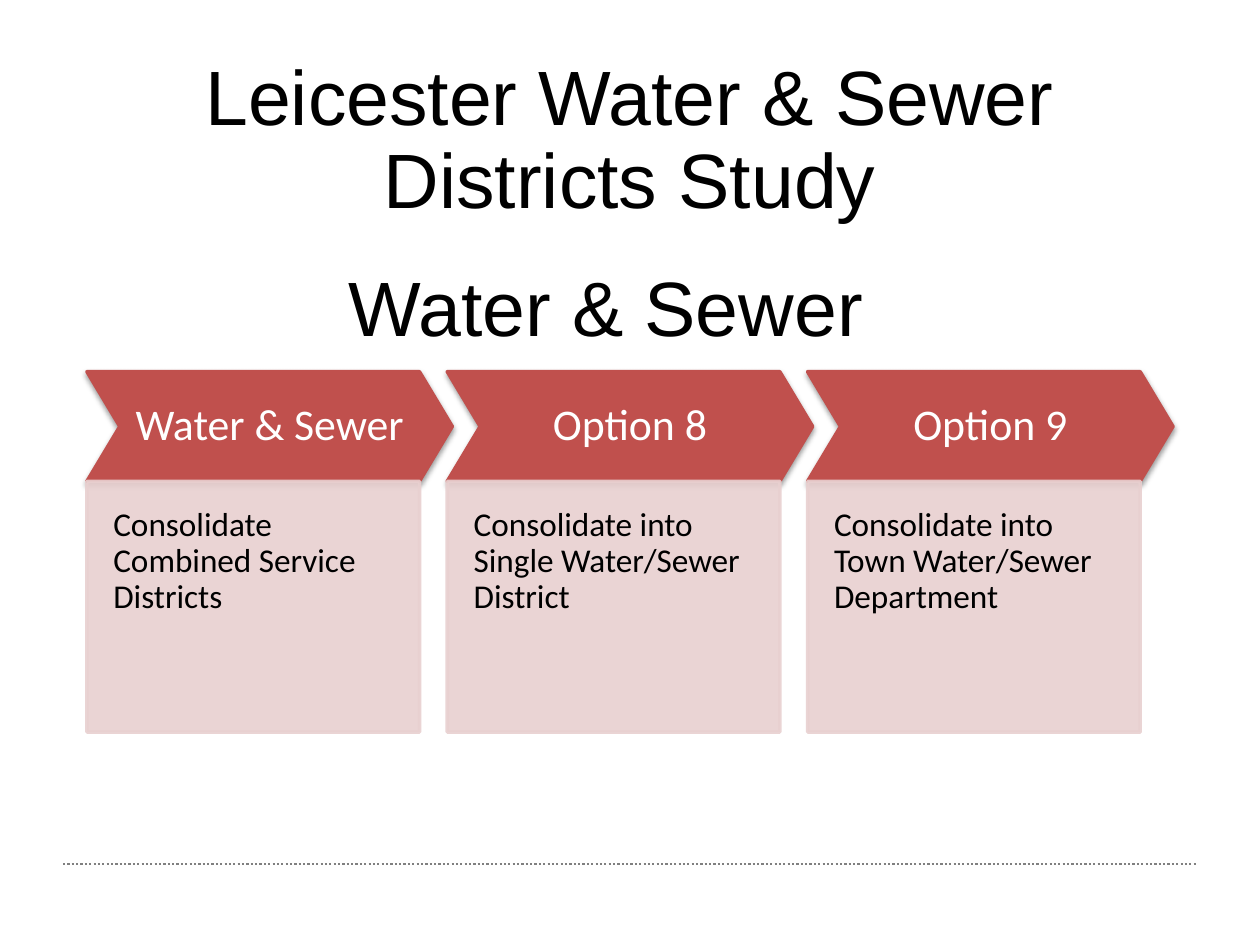
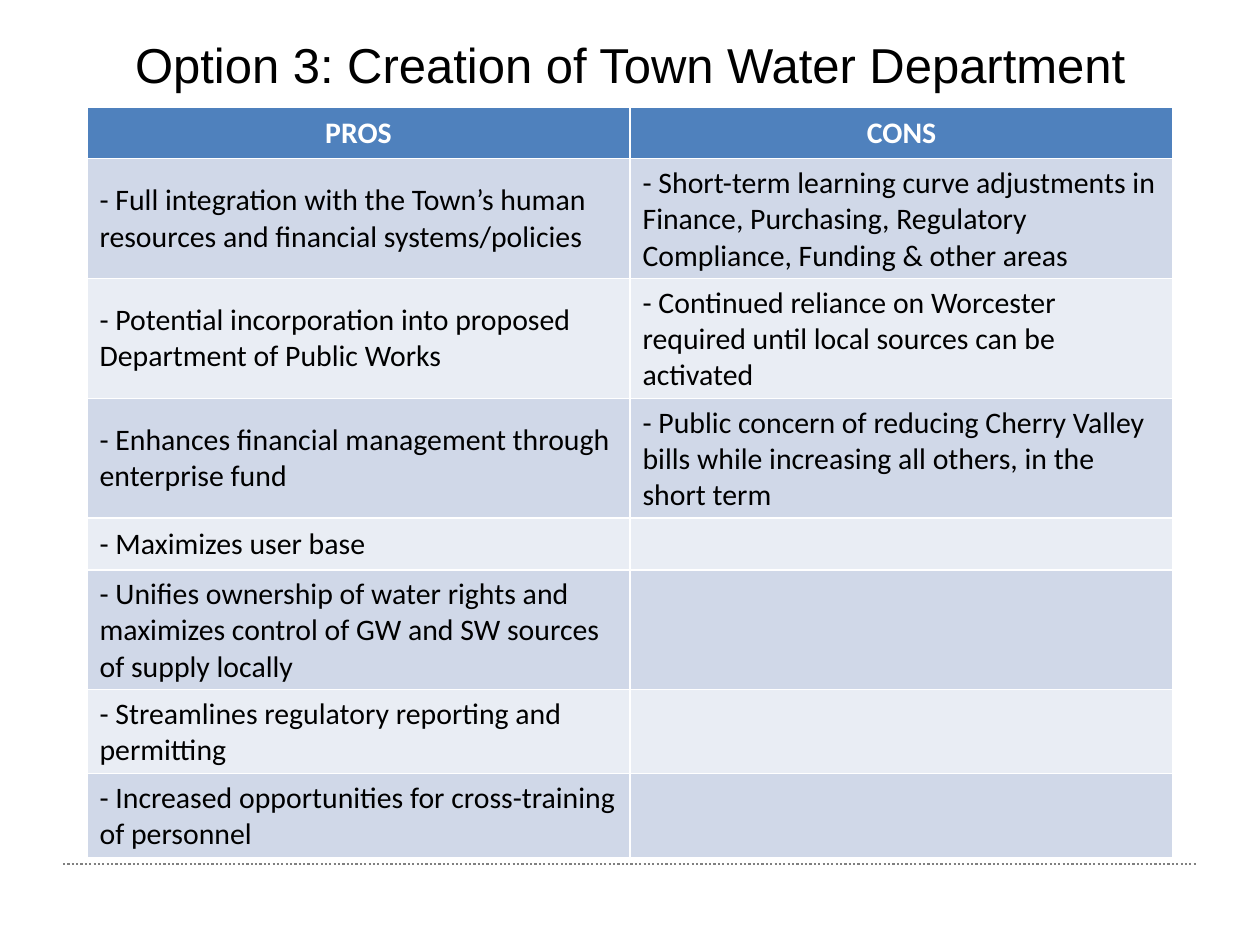
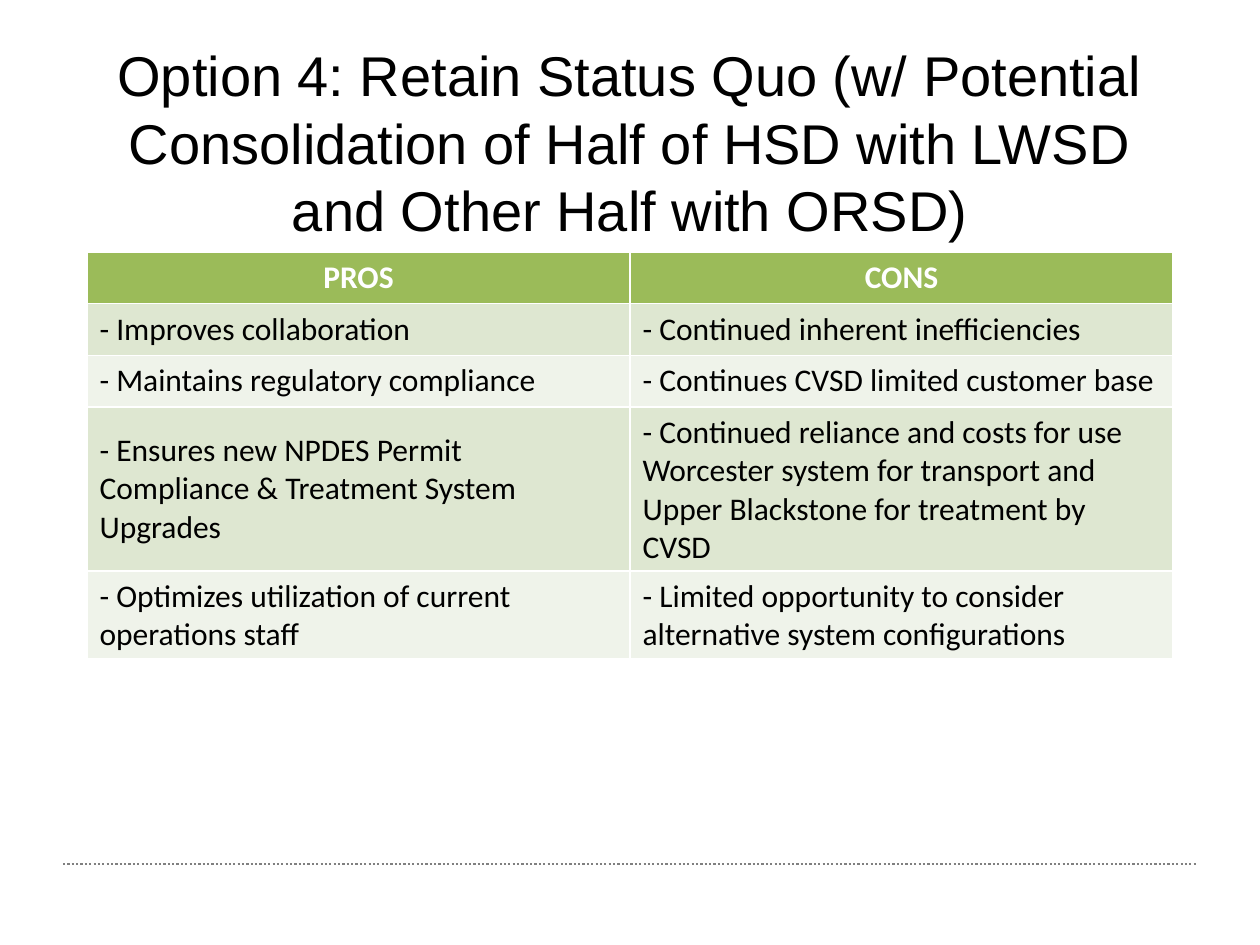
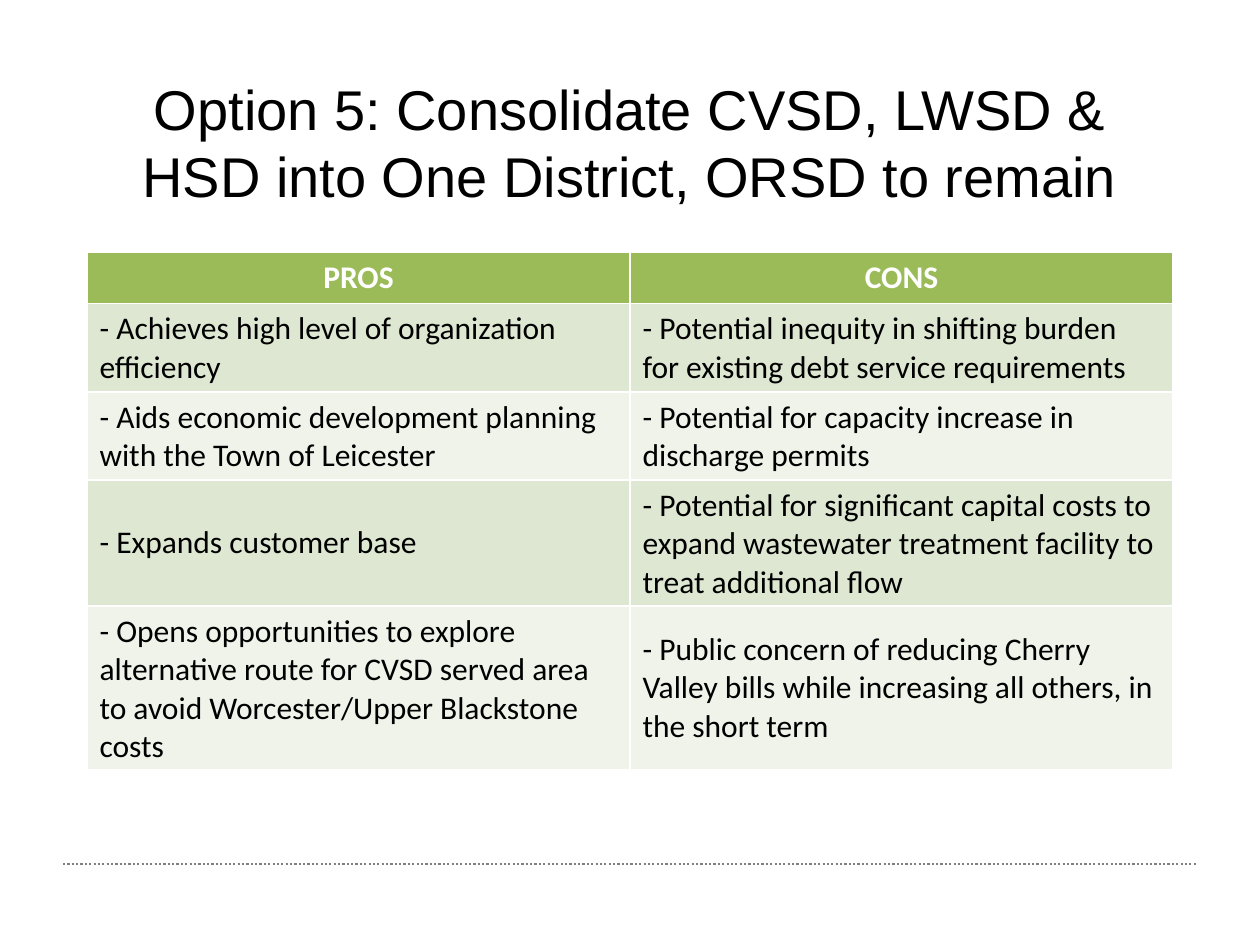
from lxml import etree
from pptx import Presentation
from pptx.dml.color import RGBColor
from pptx.enum import dml, shapes, text
from pptx.oxml import ns
from pptx.util import Inches, Pt

COLORS = {
    "black": "000000", "white": "FFFFFF", "rule": "808080",
    "red": "C0504D", "pink": "E8D0D0",
}
WATER = ("4F81BD", "D0D8E8", "E9EDF4")  # header, odd row, even row
SEWER = ("9BBB59", "DEE7D1", "EFF3EA")
LEFT, WIDTH = 0.69, 8.62
ROW_H = 0.41
MIDDLE, TOP = text.MSO_ANCHOR.MIDDLE, text.MSO_ANCHOR.TOP
CENTER, START = text.PP_ALIGN.CENTER, text.PP_ALIGN.LEFT


def rgb(name):
    return RGBColor.from_string(COLORS[name])


def box(left, top, width, height):
    return [Inches(v) for v in (left, top, width, height)]


def sub(parent, tag, **attrs):
    return etree.SubElement(parent, ns.qn(tag), attrs)


def style(p, size, color="black", font="Calibri", align=START, bold=False):
    p.alignment = align
    p.font.name = font
    p.font.size = Pt(size)
    p.font.bold = bold
    p.font.color.rgb = rgb(color)


def add_slide(prs):
    """Add a blank slide with the dotted footer rule."""
    s = prs.slides.add_slide(prs.slide_layouts[6])
    rule = s.shapes.add_connector(shapes.MSO_CONNECTOR.STRAIGHT,
                                  *box(0.5, 6.86, 9.5, 6.86))
    rule.line.color.rgb = rgb("rule")
    rule.line.width = Pt(1.25)
    rule.line.dash_style = dml.MSO_LINE.ROUND_DOT
    sub(rule._element.spPr, "a:effectLst")
    return s


def add_title(s, title, size, left=LEFT, top=0.4, height=1.45, spacing=1.0):
    tf = s.shapes.add_textbox(*box(left, top, WIDTH, height)).text_frame
    tf.word_wrap = True
    tf.vertical_anchor = MIDDLE
    p = tf.paragraphs[0]
    p.text = title
    p.line_spacing = spacing
    style(p, size, font="Arial", align=CENTER)


def add_block(s, kind, place, color, label, insets, anchor):
    """Add a filled shape with its own text frame; return it and its paragraph."""
    sp = s.shapes.add_shape(kind, *box(*place))
    sp.shadow.inherit = False
    sp.fill.solid()
    sp.fill.fore_color.rgb = rgb(color)
    sp.line.color.rgb = rgb(color)
    sp.line.width = Pt(2)
    tf = sp.text_frame
    tf.word_wrap = True
    tf.vertical_anchor = anchor
    (tf.margin_left, tf.margin_top,
     tf.margin_right, tf.margin_bottom) = box(*insets)
    p = tf.paragraphs[0]
    p.text = label
    p.line_spacing = 0.9
    return sp, p


def add_step(s, left, heading, body):
    """Add a chevron heading with its description panel below."""
    chevron, p = add_block(s, shapes.MSO_SHAPE.CHEVRON, (left, 2.95, 2.9, 0.87),
                           "red", heading, [0.1] * 4, MIDDLE)
    chevron.adjustments[0] = 0.3
    style(p, 25, "white", align=CENTER)
    effects = chevron._element.spPr.find(ns.qn("a:effectLst"))
    shadow = sub(effects, "a:outerShdw", blurRad=str(Pt(3.1)), dist=str(Pt(1.6)),
                 dir="5400000", rotWithShape="0")
    sub(sub(shadow, "a:srgbClr", val=COLORS["black"]), "a:alpha", val="38000")

    panel, p = add_block(s, shapes.MSO_SHAPE.RECTANGLE, (left, 3.82, 2.64, 1.99),
                         "pink", body, (0.21, 0.21, 0.21, 0.42), TOP)
    style(p, 19)
    for clr in panel._element.spPr.iter(ns.qn("a:srgbClr")):
        sub(clr, "a:alpha", val="90000")


def add_pros_cons(s, top, rows, palette, size):
    rows = [("PROS", "CONS")] + rows
    table = s.shapes.add_table(
        len(rows), 2, *box(LEFT, top, WIDTH, ROW_H * len(rows))).table
    header, odd, even = palette
    for i, row in enumerate(rows):
        fill = header if i == 0 else odd if i % 2 else even
        for j, entry in enumerate(row):
            cell = table.cell(i, j)
            cell.fill.solid()
            cell.fill.fore_color.rgb = RGBColor.from_string(fill)
            cell.vertical_anchor = MIDDLE
            p = cell.text_frame.paragraphs[0]
            if entry:
                p.text = entry if i == 0 else "- " + entry
            if i == 0:
                style(p, size, "white", align=CENTER, bold=True)
            else:
                style(p, size)


STEPS = [
    ("Water & Sewer", "Consolidate Combined Service Districts"),
    ("Option 8", "Consolidate into Single Water/Sewer District"),
    ("Option 9", "Consolidate into Town Water/Sewer Department"),
]
BILLS = ("Public concern of reducing Cherry Valley bills while increasing "
         "all others, in the short term")
OPTION_3 = [
    ("Full integration with the Town’s human resources and financial "
     "systems/policies",
     "Short-term learning curve adjustments in Finance, Purchasing, "
     "Regulatory Compliance, Funding & other areas"),
    ("Potential incorporation into proposed Department of Public Works",
     "Continued reliance on Worcester required until local sources can be "
     "activated"),
    ("Enhances financial management through enterprise fund", BILLS),
    ("Maximizes user base", ""),
    ("Unifies ownership of water rights and maximizes control of GW and SW "
     "sources of supply locally", ""),
    ("Streamlines regulatory reporting and permitting", ""),
    ("Increased opportunities for cross-training of personnel", ""),
]
OPTION_4 = [
    ("Improves collaboration", "Continued inherent inefficiencies"),
    ("Maintains regulatory compliance", "Continues CVSD limited customer base"),
    ("Ensures new NPDES Permit Compliance & Treatment System Upgrades",
     "Continued reliance and costs for use Worcester system for transport and "
     "Upper Blackstone for treatment by CVSD"),
    ("Optimizes utilization of current operations staff",
     "Limited opportunity to consider alternative system configurations"),
]
OPTION_5 = [
    ("Achieves high level of organization efficiency",
     "Potential inequity in shifting burden for existing debt service "
     "requirements"),
    ("Aids economic development planning with the Town of Leicester",
     "Potential for capacity increase in discharge permits"),
    ("Expands customer base",
     "Potential for significant capital costs to expand wastewater treatment "
     "facility to treat additional flow"),
    ("Opens opportunities to explore alternative route for CVSD served area "
     "to avoid Worcester/Upper Blackstone costs", BILLS),
]


def main():
    prs = Presentation()
    prs.slide_width, prs.slide_height = Inches(10), Inches(7.5)

    s = add_slide(prs)
    add_title(s, "Leicester Water & Sewer Districts Study", 44, spacing=0.9)
    for i, (heading, body) in enumerate(STEPS):
        add_step(s, LEFT + 2.86 * i, heading, body)
    add_title(s, "Water & Sewer", 44, left=0.5, top=1.75, spacing=0.9)

    s = add_slide(prs)
    add_title(s, "Option 3: Creation of Town Water Department", 28,
              top=0.17, height=0.67)
    add_pros_cons(s, 0.85, OPTION_3, WATER, 17)

    for title, rows in [
        ("Option 4: Retain Status Quo (w/ Potential Consolidation of Half of "
         "HSD with LWSD and Other Half with ORSD)", OPTION_4),
        ("Option 5: Consolidate CVSD, LWSD & HSD into One District, ORSD to "
         "remain", OPTION_5),
    ]:
        s = add_slide(prs)
        add_title(s, title, 32)
        add_pros_cons(s, 2, rows, SEWER, 18)

    prs.save("out.pptx")


if __name__ == "__main__":
    main()
